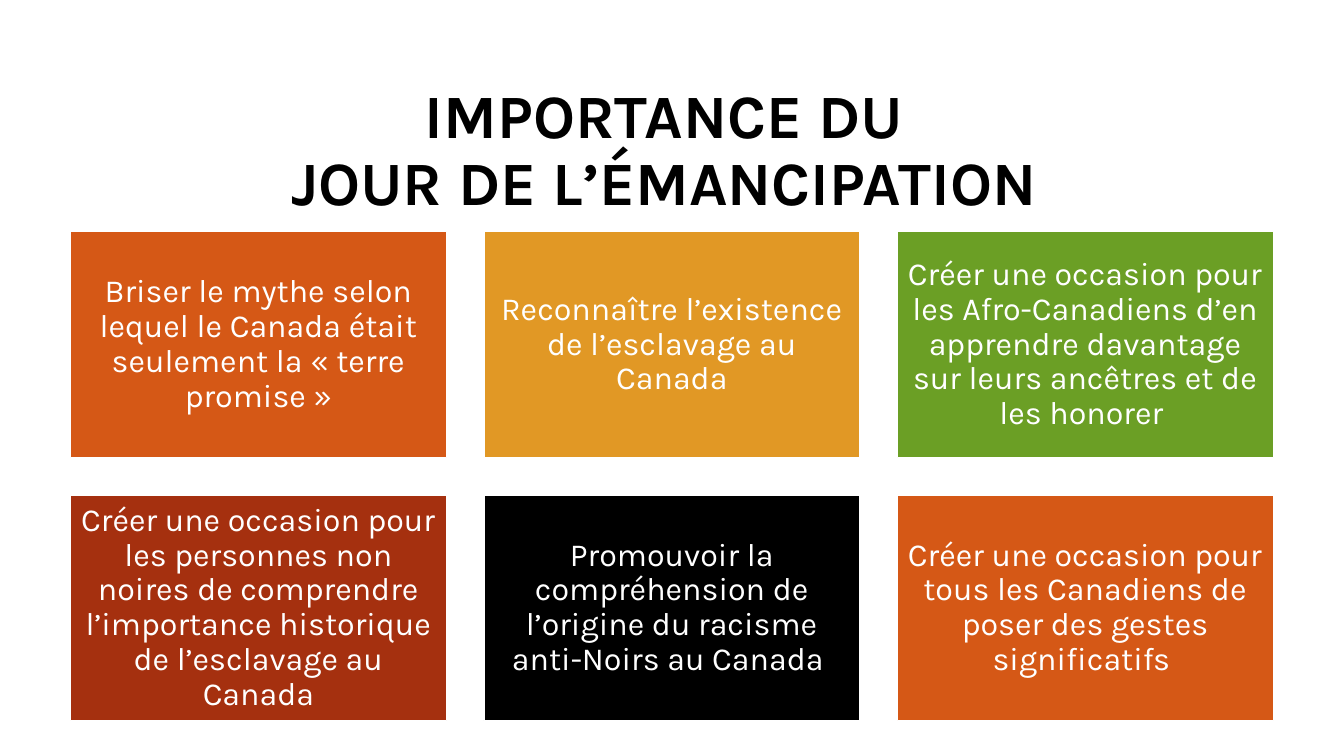
from dataclasses import dataclass

from pptx import Presentation
from pptx.dml.color import RGBColor
from pptx.enum.shapes import MSO_SHAPE
from pptx.enum.text import MSO_ANCHOR, PP_ALIGN
from pptx.util import Inches, Pt

RECTANGLE = MSO_SHAPE.RECTANGLE
CENTER = PP_ALIGN.CENTER
TOP = MSO_ANCHOR.TOP
MIDDLE = MSO_ANCHOR.MIDDLE


@dataclass(frozen=True)
class Theme:
    font: str = "Karla"
    title_size: int = 44
    card_size: int = 23
    line_spacing: float = 0.9
    black: str = "000000"
    white: str = "FFFFFF"
    orange: str = "D55816"
    amber: str = "E19825"
    green: str = "6B9F25"
    brick: str = "A5300F"


@dataclass(frozen=True)
class Grid:
    left: float = 0.7
    top: float = 2.3
    width: float = 3.73
    height: float = 2.24
    gap: float = 0.37
    columns: int = 3

    def cell(self, index):
        row, column = divmod(index, self.columns)
        left = self.left + column * (self.width + self.gap)
        top = self.top + row * (self.height + self.gap)
        return [Inches(value) for value in (left, top, self.width, self.height)]


class SlideBuilder:
    def __init__(self, slide, theme, grid):
        self.slide = slide
        self.theme = theme
        self.grid = grid

    def set_text(self, shape, text, size, color, anchor, bold=False):
        frame = shape.text_frame
        frame.word_wrap = True
        frame.vertical_anchor = anchor
        frame.text = text
        for paragraph in frame.paragraphs:
            paragraph.alignment = CENTER
            paragraph.line_spacing = self.theme.line_spacing
            for run in paragraph.runs:
                run.font.name = self.theme.font
                run.font.size = Pt(size)
                run.font.bold = bold
                run.font.color.rgb = RGBColor.from_string(color)
        return frame

    def title(self, text):
        box = self.slide.shapes.add_textbox(
            Inches(0.83), Inches(0.8), Inches(11.67), Inches(0.84))
        self.set_text(box, text, self.theme.title_size, self.theme.black, TOP, bold=True)

    def card(self, index, text, fill):
        shape = self.slide.shapes.add_shape(RECTANGLE, *self.grid.cell(index))
        shape.shadow.inherit = False
        shape.fill.solid()
        shape.fill.fore_color.rgb = RGBColor.from_string(fill)
        shape.line.color.rgb = RGBColor.from_string(self.theme.white)
        shape.line.width = Pt(1)
        frame = self.set_text(shape, text, self.theme.card_size, self.theme.white, MIDDLE)
        frame.margin_left = frame.margin_right = Inches(0.1)
        frame.margin_top = frame.margin_bottom = Inches(0.1)


def main():
    presentation = Presentation()
    presentation.slide_width = Inches(13.33)
    presentation.slide_height = Inches(7.5)
    slide = presentation.slides.add_slide(presentation.slide_layouts[6])
    theme = Theme()
    builder = SlideBuilder(slide, theme, Grid())

    builder.title("IMPORTANCE DU \vJOUR DE L’ÉMANCIPATION ")
    cards = [
        ("Briser le mythe selon lequel le Canada était seulement la « terre promise »",
         theme.orange),
        ("Reconnaître l’existence de l’esclavage au Canada", theme.amber),
        ("Créer une occasion pour les Afro-Canadiens d’en apprendre davantage "
         "sur leurs ancêtres et de les honorer ", theme.green),
        ("Créer une occasion pour les personnes non noires de comprendre "
         "l’importance historique de l’esclavage au Canada", theme.brick),
        ("Promouvoir la compréhension de l’origine du racisme anti-Noirs au Canada ",
         theme.black),
        ("Créer une occasion pour tous les Canadiens de poser des gestes significatifs ",
         theme.orange),
    ]
    for index, (text, fill) in enumerate(cards):
        builder.card(index, text, fill)

    presentation.save("out.pptx")


if __name__ == "__main__":
    main()
